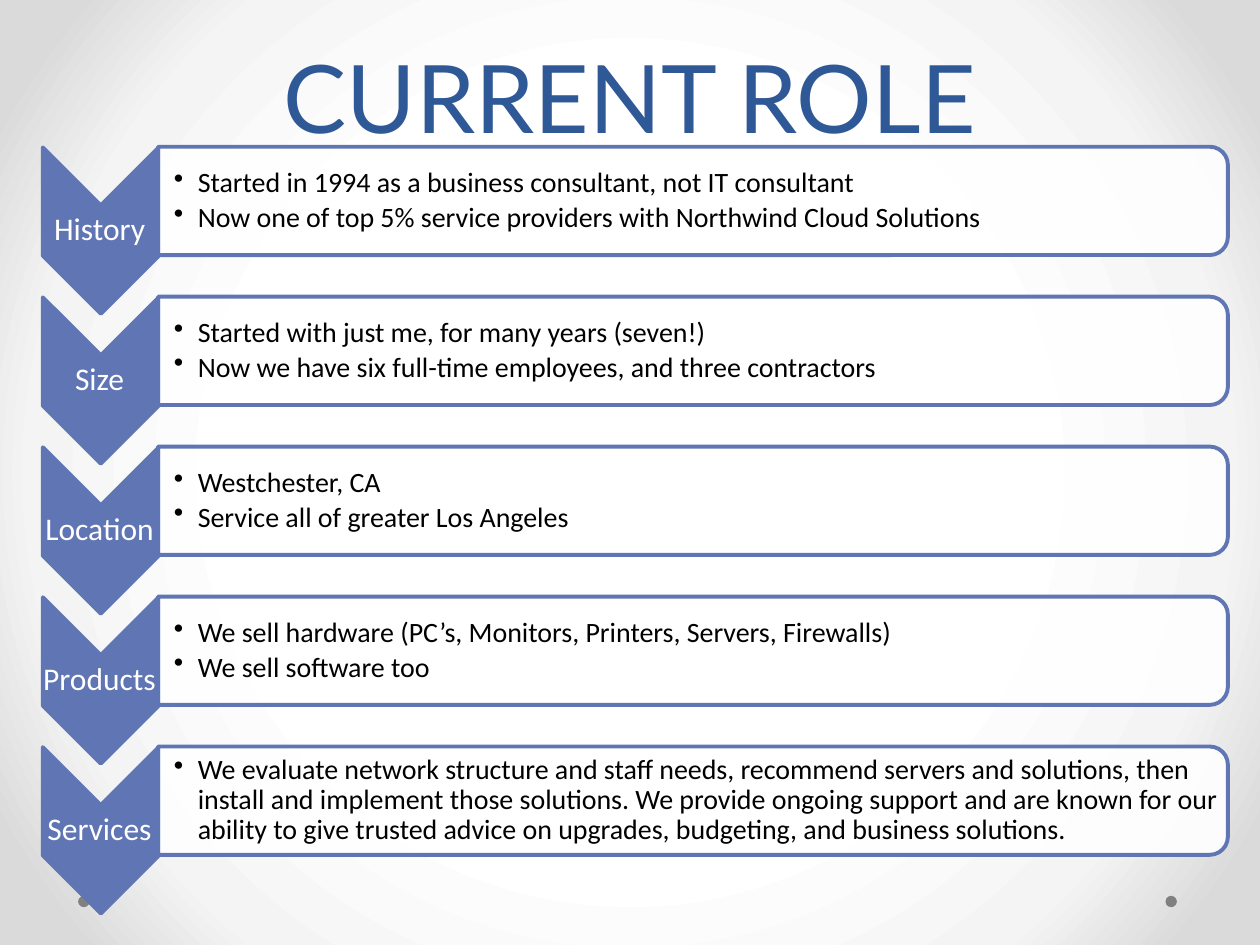
from lxml import etree
from pptx import Presentation
from pptx import util as u
from pptx.dml.color import RGBColor
from pptx.enum import shapes, text
from pptx.oxml import parse_xml
from pptx.oxml.ns import nsdecls, qn

COLORS = {
    "title": "2F5897",
    "accent": "6076B4",
    "white": "FFFFFF",
    "body": "000000",
    "dot": "808080",
}
BACKGROUND = [(50, "FFFFFF"), (76, "F4F4F4"), (92, "DADADA")]
ROWS = [
    ("History", [
        "Started in 1994 as a business consultant, not IT consultant",
        "Now one of top 5% service providers with Northwind Cloud Solutions",
    ]),
    ("Size", [
        "Started with just me, for many years (seven!)",
        "Now we have six full-time employees, and three contractors",
    ]),
    ("Location", [
        "Westchester, CA",
        "Service all of greater Los Angeles",
    ]),
    ("Products", [
        "We sell hardware (PC’s, Monitors, Printers, Servers, Firewalls)",
        "We sell software too",
    ]),
    ("Services", [
        "We evaluate network structure and staff needs, recommend servers and "
        "solutions, then install and implement those solutions. We provide "
        "ongoing support and are known for our ability to give trusted advice "
        "on upgrades, budgeting, and business solutions.",
    ]),
]
TOP = 1.17
PITCH = 1.19


class Deck:
    def __init__(self, width, height):
        self.prs = Presentation()
        self.prs.slide_width = u.Inches(width)
        self.prs.slide_height = u.Inches(height)
        self.s = self.prs.slides.add_slide(self.prs.slide_layouts[6])

    def background(self, stops):
        fill = self.s.background.fill
        fill.solid()
        solid = self.s.background._cSld.find(".//" + qn("a:solidFill"))
        gs = "".join(
            f'<a:gs pos="{pos * 1000}"><a:srgbClr val="{color}"/></a:gs>'
            for pos, color in stops
        )
        gradient = parse_xml(
            f'<a:gradFill {nsdecls("a")} rotWithShape="1"><a:gsLst>{gs}</a:gsLst>'
            '<a:path path="circle">'
            '<a:fillToRect l="50000" t="50000" r="50000" b="50000"/>'
            '</a:path></a:gradFill>'
        )
        solid.getparent().replace(solid, gradient)

    def shape(self, kind, box, fill, line=None, rotation=0, alpha=None):
        sp = self.s.shapes.add_shape(kind, *map(u.Inches, box))
        sp.shadow.inherit = False
        sp.rotation = rotation
        sp.fill.solid()
        sp.fill.fore_color.rgb = RGBColor.from_string(COLORS[fill])
        if alpha:
            color = sp._element.spPr.find(qn("a:solidFill"))[0]
            etree.SubElement(color, qn("a:alpha")).set("val", str(alpha * 1000))
        if line:
            sp.line.color.rgb = RGBColor.from_string(COLORS[line])
            sp.line.width = u.Pt(2.25)
            etree.SubElement(sp.line._ln, qn("a:round"))
        else:
            sp.line.fill.background()

    def text(self, box, lines, size, color, font="Calibri", spacing=0.9,
             insets=(0.01, 0.01, 0.01, 0.01), anchor=text.MSO_ANCHOR.MIDDLE,
             bullets=False):
        tf = self.s.shapes.add_textbox(*map(u.Inches, box)).text_frame
        tf.word_wrap = True
        tf.vertical_anchor = anchor
        tf.margin_left, tf.margin_top, tf.margin_right, tf.margin_bottom = map(
            u.Inches, insets)
        tf.text = "\n".join(lines)
        for p in tf.paragraphs:
            p.line_spacing = spacing
            if bullets:
                p.alignment = text.PP_ALIGN.LEFT
                p.space_after = u.Pt(2.4)
                self.bullet(p)
            else:
                p.alignment = text.PP_ALIGN.CENTER
            for r in p.runs:
                r.font.name = font
                r.font.size = u.Pt(size)
                r.font.color.rgb = RGBColor.from_string(COLORS[color])

    def bullet(self, p):
        pPr = p._p.get_or_add_pPr()
        indent = u.Inches(0.19)
        pPr.set("marL", str(indent))
        pPr.set("indent", str(-indent))
        etree.SubElement(pPr, qn("a:buChar")).set("char", "•")

    def row(self, top, label, lines):
        kinds = shapes.MSO_SHAPE
        self.shape(kinds.CHEVRON, (0.14, top + 0.2, 1.32, 0.92),
                   "accent", "accent", rotation=90)
        self.text((0.33, top + 0.46, 0.92, 0.4), [label], 18, "white")
        self.shape(kinds.ROUND_2_SAME_RECTANGLE, (5.07, top - 3.82, 0.86, 8.49),
                   "white", "accent", rotation=90, alpha=90)
        self.text((1.26, top + 0.04, 8.45, 0.77), lines, 16, "body",
                  insets=(0.12, 0.01, 0.01, 0.01), bullets=True)


def main():
    deck = Deck(10, 7.5)
    deck.background(BACKGROUND)
    for left in (9.25, 0.62):
        deck.shape(shapes.MSO_SHAPE.OVAL, (left, 7.11, 0.09, 0.09), "dot")
    deck.text((0.5, 0.01, 9, 1.25), ["CURRENT ROLE"], 54, "title", font="Lato",
              spacing=u.Pt(58), insets=(0.1, 0.05, 0.1, 0.05),
              anchor=text.MSO_ANCHOR.BOTTOM)
    for i, (label, lines) in enumerate(ROWS):
        deck.row(TOP + i * PITCH, label, lines)
    deck.prs.save("out.pptx")


if __name__ == "__main__":
    main()
